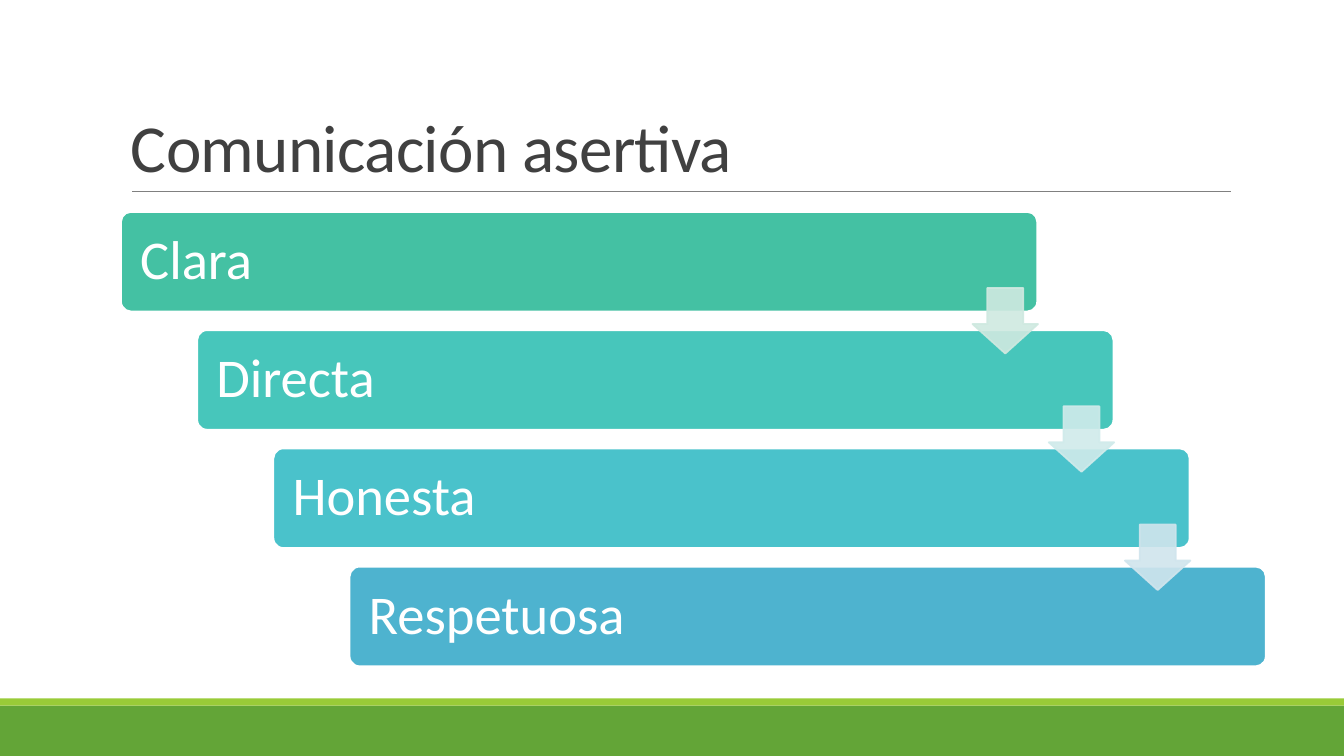
from pptx import Presentation
from pptx.dml.color import RGBColor
from pptx.enum.shapes import MSO_CONNECTOR as Connector, MSO_SHAPE as Shape
from pptx.enum.text import MSO_ANCHOR as Anchor, MSO_AUTO_SIZE as AutoSize, PP_ALIGN as Align
from pptx.oxml.ns import qn
from pptx.util import Cm, Pt
from lxml.etree import SubElement

# Content
TITLE = "Comunicación asertiva"
STEPS = [  # text, bar colour, colour of the arrow to the next bar
    ("Clara", RGBColor(0x44, 0xC1, 0xA3), RGBColor(0xCF, 0xE9, 0xE0)),
    ("Directa", RGBColor(0x47, 0xC6, 0xBB), RGBColor(0xD0, 0xEB, 0xEB)),
    ("Honesta", RGBColor(0x4A, 0xC2, 0xCB), RGBColor(0xD0, 0xE5, 0xED)),
    ("Respetuosa", RGBColor(0x4E, 0xB3, 0xCF), None),
]

# Style
FONT = "Calibri"
WHITE = RGBColor(0xFF, 0xFF, 0xFF)
DARK_GRAY = RGBColor(0x40, 0x40, 0x40)
RULE_GRAY = RGBColor(0x80, 0x80, 0x80)
GREEN = RGBColor(0x63, 0xA5, 0x37)
LIME = RGBColor(0x99, 0xCB, 0x38)

# Layout in centimetres
SLIDE_WIDTH, SLIDE_HEIGHT = 33.87, 19.05
BAR_LEFT, BAR_TOP, BAR_WIDTH, BAR_HEIGHT = 3.05, 5.34, 23.09, 2.51
STEP_X, STEP_Y = 1.92, 2.98
ARROW_LEFT, ARROW_TOP, ARROW_SIZE = 24.51, 7.26, 1.65


def write_text(shape, text, size, color, anchor, line_spacing, inset=0.25, tracking=0):
    frame = shape.text_frame
    frame.word_wrap = True
    frame.auto_size = AutoSize.NONE
    frame.vertical_anchor = anchor
    frame.margin_left = frame.margin_right = Cm(inset)
    frame.margin_top = frame.margin_bottom = Cm(0.13)
    paragraph = frame.paragraphs[0]
    paragraph.alignment = Align.LEFT
    paragraph.line_spacing = line_spacing
    run = paragraph.add_run()
    run.text = text
    run.font.name = FONT
    run.font.size = Pt(size)
    run.font.color.rgb = color
    if tracking:
        run._r.get_or_add_rPr().set("spc", str(tracking))


def add_block(slide, kind, left, top, width, height, fill, line=None, adjustments=()):
    shape = slide.shapes.add_shape(kind, Cm(left), Cm(top), Cm(width), Cm(height))
    shape.shadow.inherit = False
    shape.fill.solid()
    shape.fill.fore_color.rgb = fill
    if line is None:
        shape.line.fill.background()
    else:
        shape.line.color.rgb = line
        shape.line.width = Pt(1.25)
    for index, value in enumerate(adjustments):
        shape.adjustments[index] = value
    return shape


def set_opacity(shape, percent):
    for color in shape._element.spPr.iter(qn("a:srgbClr")):
        SubElement(color, qn("a:alpha")).set("val", str(percent * 1000))


def main():
    presentation = Presentation()
    presentation.slide_width = Cm(SLIDE_WIDTH)
    presentation.slide_height = Cm(SLIDE_HEIGHT)
    slide = presentation.slides.add_slide(presentation.slide_layouts[5])

    # Footer bands
    add_block(slide, Shape.RECTANGLE, 0, 17.78, SLIDE_WIDTH, 1.27, GREEN)
    add_block(slide, Shape.RECTANGLE, 0, 17.6, SLIDE_WIDTH, 0.18, LIME)

    # Title and the rule below it
    title = slide.shapes.title
    title.left, title.top, title.width, title.height = Cm(3.05), Cm(0.79), Cm(27.94), Cm(4.04)
    write_text(title, TITLE, 48, DARK_GRAY, Anchor.BOTTOM, 0.85, tracking=-50)
    rule = slide.shapes.add_connector(Connector.STRAIGHT, Cm(3.33), Cm(4.83), Cm(31.01), Cm(4.83))
    rule.line.color.rgb = RULE_GRAY
    rule.line.width = Pt(0.5)
    SubElement(rule._element.spPr, qn("a:effectLst"))

    # Staircase of bars
    for index, (text, bar_color, _) in enumerate(STEPS):
        bar = add_block(slide, Shape.ROUNDED_RECTANGLE, BAR_LEFT + index * STEP_X,
                        BAR_TOP + index * STEP_Y, BAR_WIDTH, BAR_HEIGHT,
                        bar_color, WHITE, [0.1])
        write_text(bar, text, 39, WHITE, Anchor.MIDDLE, 0.9, inset=0.41)

    # Arrows from each bar to the next
    for index, (_, _, arrow_color) in enumerate(STEPS[:-1]):
        arrow = add_block(slide, Shape.DOWN_ARROW, ARROW_LEFT + index * STEP_X,
                          ARROW_TOP + index * STEP_Y, ARROW_SIZE, ARROW_SIZE,
                          arrow_color, arrow_color, [0.55, 0.45])
        set_opacity(arrow, 90)

    presentation.save("out.pptx")


if __name__ == "__main__":
    main()
